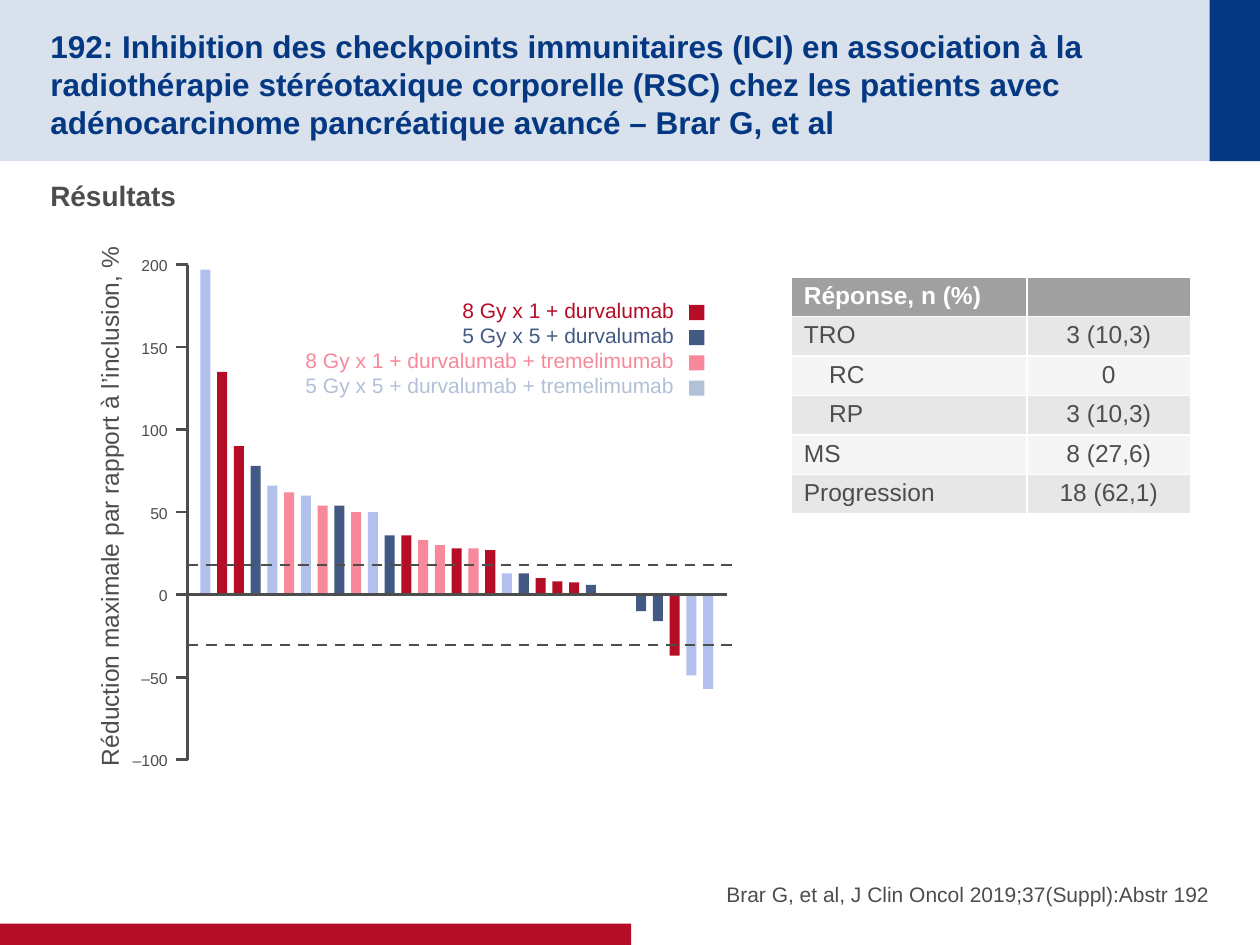
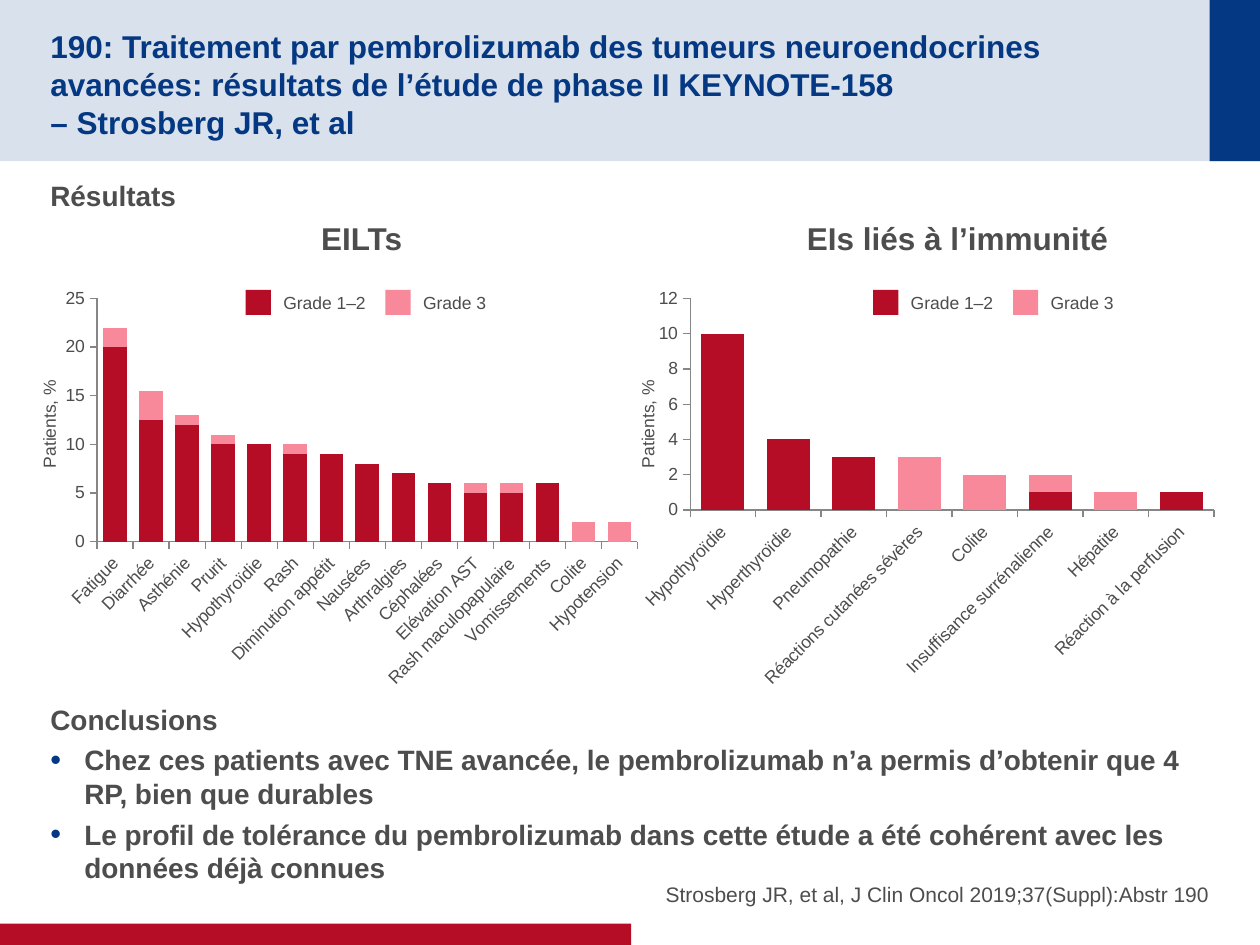
from dataclasses import dataclass

from lxml.etree import SubElement
from pptx import Presentation
from pptx.chart.data import CategoryChartData
from pptx.dml.color import RGBColor
from pptx.enum.chart import XL_CHART_TYPE, XL_TICK_MARK
from pptx.enum.dml import MSO_LINE
from pptx.enum.shapes import MSO_CONNECTOR, MSO_SHAPE
from pptx.enum.text import MSO_ANCHOR, MSO_AUTO_SIZE, PP_ALIGN
from pptx.oxml import parse_xml
from pptx.oxml.ns import nsdecls, qn
from pptx.util import Inches, Pt


@dataclass(frozen=True)
class Theme:
    font: str = "Arial"
    navy: str = "043882"
    pale_navy: str = "D9E1EC"
    red: str = "B60D27"
    pink: str = "F7899A"
    slate: str = "425A83"
    light_blue: str = "B2C0EC"
    legend_blue: str = "B2C0D8"
    ink: str = "4D4D4D"
    white: str = "FFFFFF"
    axis: str = "868686"
    table_head: str = "A0A0A0"
    table_odd: str = "E7E7E7"
    table_even: str = "F5F5F5"
    title: int = 18
    body: int = 16
    table: int = 14
    small: int = 12
    label: int = 10
    tick: int = 9


THEME = Theme()

BANDS = [
    ((0, 0, 10, 1.28), THEME.pale_navy),
    ((9.6, 0, 0.4, 1.28), THEME.navy),
    ((0, 7.33, 5.01, 0.17), THEME.red),
]

RESPONSE_TITLE = (
    "192: Inhibition des checkpoints immunitaires (ICI) en association à la "
    "radiothérapie stéréotaxique corporelle (RSC) chez les patients avec "
    "adénocarcinome pancréatique avancé – Brar G, et al"
)
RESPONSE_SOURCE = "Brar G, et al, J Clin Oncol 2019;37(Suppl):Abstr 192"
RESPONSE_ROWS = [
    ("Réponse, n (%)", ""),
    ("TRO", "3 (10,3)"),
    ("RC", "0"),
    ("RP", "3 (10,3)"),
    ("MS", "8 (27,6)"),
    ("Progression", "18 (62,1)"),
]
INDENTED_ROWS = ("RC", "RP")

ARMS = [
    ("8 Gy x 1 + durvalumab", THEME.red),
    ("5 Gy x 5 + durvalumab", THEME.slate),
    ("8 Gy x 1 + durvalumab + tremelimumab", THEME.pink),
    ("5 Gy x 5 + durvalumab + tremelimumab", THEME.legend_blue),
]
ARM_COLORS = {"R": THEME.red, "S": THEME.slate, "P": THEME.pink, "L": THEME.light_blue}
# One bar per patient: arm, change from baseline in %
BEST_CHANGES = [
    ("L", 197), ("R", 135), ("R", 90), ("S", 78), ("L", 66), ("P", 62), ("L", 60),
    ("P", 54), ("S", 54), ("P", 50), ("L", 50), ("S", 36), ("R", 36), ("P", 33),
    ("P", 30), ("R", 28), ("P", 28), ("R", 27), ("L", 13), ("S", 13), ("R", 10),
    ("R", 8), ("R", 7.5), ("S", 6), ("S", 0), ("S", 0), ("S", -10), ("S", -16),
    ("R", -37), ("L", -49), ("L", -57),
]
CHANGE_TICKS = range(-100, 201, 50)
THRESHOLDS = (18, -30.5)

SAFETY_TITLE = (
    "190: Traitement par pembrolizumab des tumeurs neuroendocrines avancées: "
    "résultats de l’étude de phase II KEYNOTE-158 \v– Strosberg JR, et al"
)
SAFETY_SOURCE = "Strosberg JR, et al, J Clin Oncol 2019;37(Suppl):Abstr 190"
CONCLUSIONS = [
    "Chez ces patients avec TNE avancée, le pembrolizumab n’a permis d’obtenir que 4 RP, "
    "bien que durables",
    "Le profil de tolérance du pembrolizumab dans cette étude a été cohérent avec les "
    "données déjà connues",
]
GRADES = [("Grade 1–2", THEME.red), ("Grade 3", THEME.pink)]
EVENT_CHARTS = [
    {
        "heading": "EILTs", "center": 2.87, "left": 0.43, "legend": 1.95, "axis_title": 0.39,
        "plot": (0.77, 2.37, 4.29, 1.93), "maximum": 25, "step": 5,
        "events": [
            ("Fatigue", 20, 2), ("Diarrhée", 12.5, 3), ("Asthénie", 12, 1),
            ("Prurit", 10, 1), ("Hypothyroïdie", 10, None), ("Rash", 9, 1),
            ("Diminution appétit", 9, None), ("Nausées", 8, None),
            ("Arthralgies", 7, None), ("Céphalées", 6, None), ("Elévation AST", 5, 1),
            ("Rash maculopapulaire", 5, 1), ("Vomissements", 6, None),
            ("Colite", None, 2), ("Hypotension", None, 2),
        ],
    },
    {
        "heading": "EIs liés à l’immunité", "center": 7.6, "left": 5, "legend": 6.93,
        "axis_title": 5.14, "plot": (5.48, 2.37, 4.16, 1.68), "maximum": 12, "step": 2,
        "events": [
            ("Hypothyroïdie", 10, None), ("Hyperthyroïdie", 4, None),
            ("Pneumopathie", 3, None), ("Réactions cutanées sévères", None, 3),
            ("Colite", None, 2), ("Insuffisance surrénalienne", 1, 1),
            ("Hépatite", None, 1), ("Réaction à la perfusion", 1, None),
        ],
    },
]


def color(code):
    return RGBColor.from_string(code)


def box(left, top, width, height):
    return [Inches(value) for value in (left, top, width, height)]


def write(paragraph, text, size=THEME.body, ink=THEME.ink, bold=False, align=PP_ALIGN.LEFT,
          before=0, after=0, margin=0.0, bullet=False):
    paragraph.text = text
    paragraph.alignment = align
    paragraph.space_before, paragraph.space_after = Pt(before), Pt(after)
    for run in paragraph.runs:
        run.font.name, run.font.size, run.font.bold = THEME.font, Pt(size), bold
        run.font.color.rgb = color(ink)
    if not text:
        SubElement(paragraph._p, qn("a:endParaRPr"), sz=str(size * 100))
    properties = paragraph._p.get_or_add_pPr()
    properties.set("marL", str(Inches(margin)))
    if bullet:
        properties.set("indent", str(-Inches(margin)))
        bullet_color = SubElement(properties, qn("a:buClr"))
        SubElement(bullet_color, qn("a:srgbClr"), val=THEME.navy)
        SubElement(properties, qn("a:buSzPct"), val="110000")
        SubElement(properties, qn("a:buFont"), typeface=THEME.font)
        SubElement(properties, qn("a:buChar"), char="•")


def set_margins(frame, left, top, right, bottom):
    frame.margin_left, frame.margin_top, frame.margin_right, frame.margin_bottom = box(
        left, top, right, bottom)


def add_text(slide, position, paragraphs, anchor=MSO_ANCHOR.TOP, margins=(0.1, 0.05, 0.1, 0.05),
             rotation=0):
    """Add a text box; each paragraph is a (text, format) pair."""
    shape = slide.shapes.add_textbox(*box(*position))
    shape.rotation = rotation
    frame = shape.text_frame
    frame.word_wrap, frame.vertical_anchor = True, anchor
    set_margins(frame, *margins)
    for index, (text, text_format) in enumerate(paragraphs):
        paragraph = frame.add_paragraph() if index else frame.paragraphs[0]
        write(paragraph, text, **text_format)


def add_rectangle(slide, position, fill):
    shape = slide.shapes.add_shape(MSO_SHAPE.RECTANGLE, *box(*position))
    shape.shadow.inherit = False
    shape.fill.solid()
    shape.fill.fore_color.rgb = color(fill)
    shape.line.fill.background()
    return shape


def add_line(slide, start, end, dashed=False):
    line = slide.shapes.add_connector(MSO_CONNECTOR.STRAIGHT, *box(*start, *end))
    line.line.color.rgb, line.line.width = color(THEME.ink), Pt(1.5)
    if dashed:
        line.line.dash_style = MSO_LINE.DASH
    SubElement(line.element.spPr, qn("a:effectLst"))


def put_bands_on_layout(slide):
    tree = slide.slide_layout.shapes.element
    for index, (position, fill) in enumerate(BANDS):
        band = add_rectangle(slide, position, fill)
        band.element.nvSpPr.cNvPr.set("id", str(100 + index))
        tree.insert(2 + index, band.element)


def add_framed_slide(presentation, title, body, source):
    """Add a slide with its title, body paragraphs and citation."""
    slide = presentation.slides.add_slide(presentation.slide_layouts[5])
    shape = slide.shapes.title
    shape.left, shape.top, shape.width, shape.height = box(0.4, 0.2, 9.01, 0.88)
    frame = shape.text_frame
    frame.auto_size, frame.word_wrap = MSO_AUTO_SIZE.NONE, True
    frame.vertical_anchor = MSO_ANCHOR.MIDDLE
    set_margins(frame, 0, 0.05, 0, 0)
    write(frame.paragraphs[0], title, size=THEME.title, ink=THEME.navy, bold=True)
    add_text(slide, (0.4, 1.37, 9.2, 5.6), body, margins=(0, 0.05, 0, 0.05))
    citation = dict(size=THEME.small, align=PP_ALIGN.RIGHT, after=4)
    add_text(slide, (4.6, 6.67, 5, 0.53), [(source, citation)], MSO_ANCHOR.BOTTOM, (0, 0, 0, 0))
    return slide


def add_response_table(slide):
    row_height = 0.3
    table = slide.shapes.add_table(
        len(RESPONSE_ROWS), 2, *box(6.28, 2.2, 3.17, row_height * len(RESPONSE_ROWS))).table
    table.columns[0].width, table.columns[1].width = Inches(1.87), Inches(1.3)
    for row, texts in enumerate(RESPONSE_ROWS):
        fill = THEME.table_odd if row % 2 else THEME.table_even
        for column, text in enumerate(texts):
            cell = table.cell(row, column)
            cell.fill.solid()
            cell.fill.fore_color.rgb = color(fill if row else THEME.table_head)
            set_margins(cell, 0.1, 0.04, 0.1, 0.04)
            write(cell.text_frame.paragraphs[0], text, size=THEME.table, bold=row == 0,
                  ink=THEME.ink if row else THEME.white,
                  align=PP_ALIGN.CENTER if column else PP_ALIGN.LEFT,
                  margin=0.2 if text in INDENTED_ROWS else 0)


def add_waterfall(slide):
    zero, axis_left, inches_per_percent = 4.72, 1.49, 1.31 / 100
    first_bar, pitch, bar_width = 1.59, 0.133, 0.08

    def height_of(value):
        return zero - value * inches_per_percent

    for index, (arm, value) in enumerate(BEST_CHANGES):
        if value:
            top = min(zero, height_of(value))
            add_rectangle(slide, (first_bar + index * pitch, top, bar_width,
                                  abs(value) * inches_per_percent), ARM_COLORS[arm])

    add_line(slide, (axis_left, height_of(200)), (axis_left, height_of(-100)))
    for value in CHANGE_TICKS:
        y = height_of(value)
        add_line(slide, (1.4, y), (axis_left if value else 5.77, y))
        add_text(slide, (0.73, y - 0.12, 0.7, 0.25),
                 [(str(value).replace("-", "–"), dict(size=THEME.tick, align=PP_ALIGN.RIGHT))],
                 MSO_ANCHOR.MIDDLE)
    for value in THRESHOLDS:
        add_line(slide, (axis_left, height_of(value)), (5.86, height_of(value)), dashed=True)

    add_text(slide, (-1.36, 3.85, 4.46, 0.34),
             [("Réduction maximale par rapport à l’inclusion, %",
               dict(size=THEME.table, align=PP_ALIGN.CENTER))], rotation=270)
    add_text(slide, (2.15, 2.31, 3.3, 0.91),
             [(name, dict(size=THEME.small, ink=ink, align=PP_ALIGN.RIGHT)) for name, ink in ARMS])
    for index, (_, fill) in enumerate(ARMS):
        add_rectangle(slide, (5.47, 2.42 + index * 0.2, 0.12, 0.12), fill)


def place_plot(chart, frame, plot):
    """Fix the inner plot area, given in slide inches."""
    shares = {
        "x": (plot[0] - frame[0]) / frame[2], "y": (plot[1] - frame[1]) / frame[3],
        "w": plot[2] / frame[2], "h": plot[3] / frame[3],
    }
    modes = "".join(f'<c:{side}Mode val="edge"/>' for side in "xy")
    sizes = "".join(f'<c:{key} val="{share:.3f}"/>' for key, share in shares.items())
    plot_area = chart.element.find(".//" + qn("c:plotArea"))
    for layout in plot_area.findall(qn("c:layout")):
        plot_area.remove(layout)
    plot_area.insert(0, parse_xml(
        f'<c:layout {nsdecls("c")}><c:manualLayout><c:layoutTarget val="inner"/>'
        f'{modes}{sizes}</c:manualLayout></c:layout>'))


def add_event_chart(slide, details):
    names, *grade_values = zip(*details["events"])
    data = CategoryChartData()
    data.categories = names
    for (grade, _), values in zip(GRADES, grade_values):
        data.add_series(grade, values)
    frame = (details["left"], 2.22, 4.73, 3.3)
    chart = slide.shapes.add_chart(XL_CHART_TYPE.COLUMN_STACKED, *box(*frame), data).chart
    chart.has_legend = chart.has_title = False
    chart.font.name, chart.font.size = THEME.font, Pt(THEME.label)
    chart.font.color.rgb = color(THEME.ink)
    plot = chart.plots[0]
    plot.gap_width, plot.overlap, plot.vary_by_categories = 53, 100, False
    for series, (_, fill) in zip(plot.series, GRADES):
        series.format.fill.solid()
        series.format.fill.fore_color.rgb = color(fill)
    for axis in (chart.category_axis, chart.value_axis):
        axis.has_major_gridlines = False
        axis.major_tick_mark = XL_TICK_MARK.OUTSIDE
        axis.format.line.color.rgb, axis.format.line.width = color(THEME.axis), Pt(0.75)
        axis.tick_labels.font.size = Pt(THEME.label)
        axis.tick_labels.font.color.rgb = color(THEME.ink)
    value_axis = chart.value_axis
    value_axis.minimum_scale, value_axis.maximum_scale = 0, details["maximum"]
    value_axis.major_unit = details["step"]
    label_body = chart.category_axis._element.find(".//" + qn("a:bodyPr"))
    label_body.set("rot", "-2700000")
    label_body.set("vert", "horz")
    place_plot(chart, frame, details["plot"])

    add_text(slide, (details["center"] - 1.5, 1.69, 3, 0.4),
             [(details["heading"], dict(size=THEME.title, bold=True, align=PP_ALIGN.CENTER))])
    for index, (grade, fill) in enumerate(GRADES):
        left = details["legend"] + index * 1.11
        add_rectangle(slide, (left, 2.3, 0.2, 0.2), fill)
        add_text(slide, (left + 0.2, 2.27, 0.9, 0.27), [(grade, dict(size=THEME.label))])
    add_text(slide, (details["axis_title"] - 0.6, 3.23, 1.2, 0.27),
             [("Patients, %", dict(size=THEME.label, align=PP_ALIGN.CENTER))], rotation=270)


def main():
    presentation = Presentation()
    presentation.slide_width, presentation.slide_height = Inches(10), Inches(7.5)
    title_style = presentation.slide_master.element.find(".//" + qn("p:titleStyle"))
    title_style.find(".//" + qn("a:defRPr")).set("sz", str(THEME.title * 100))

    heading = dict(bold=True, after=4)
    results = ("Résultats", heading)
    response_slide = add_framed_slide(presentation, RESPONSE_TITLE, [results], RESPONSE_SOURCE)
    put_bands_on_layout(response_slide)
    add_response_table(response_slide)
    add_waterfall(response_slide)

    safety_body = [results, ("Conclusions", dict(heading, before=276))]
    safety_body += [(text, dict(heading, margin=0.27, bullet=True)) for text in CONCLUSIONS]
    safety_slide = add_framed_slide(presentation, SAFETY_TITLE, safety_body, SAFETY_SOURCE)
    for details in EVENT_CHARTS:
        add_event_chart(safety_slide, details)
    presentation.save("out.pptx")


if __name__ == "__main__":
    main()
